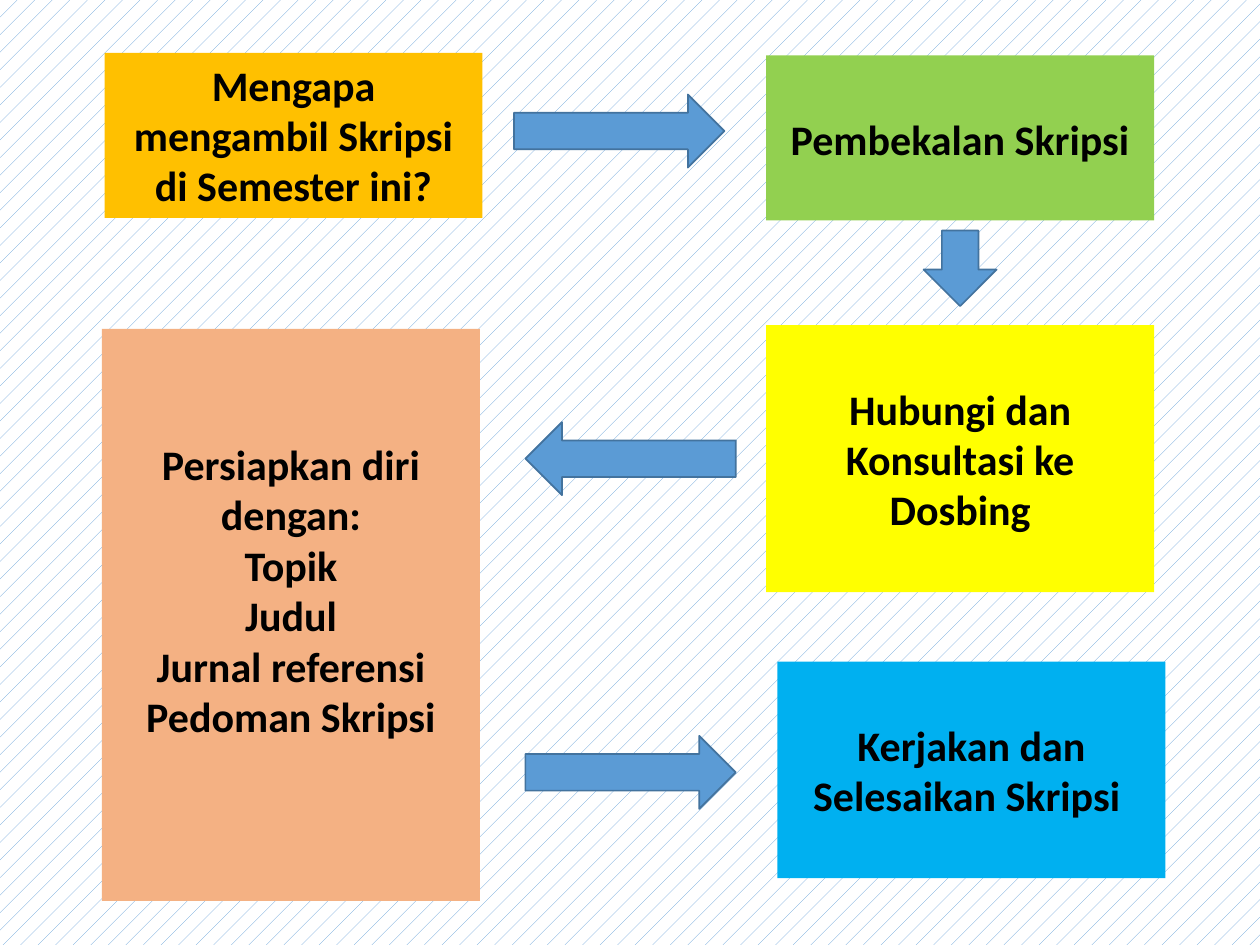
from pptx import Presentation
from pptx.dml.color import RGBColor
from pptx.enum.dml import MSO_PATTERN
from pptx.enum.shapes import MSO_SHAPE as Shape
from pptx.enum.text import MSO_ANCHOR as Anchor, PP_ALIGN as Align
from pptx.util import Inches, Pt

BLACK = RGBColor(0x00, 0x00, 0x00)
WHITE = RGBColor(0xFF, 0xFF, 0xFF)
BLUE = RGBColor(0x5B, 0x9B, 0xD5)
DARK_BLUE = RGBColor(0x43, 0x73, 0x9E)
ORANGE = RGBColor(0xFF, 0xC0, 0x00)
GREEN = RGBColor(0x92, 0xD0, 0x50)
YELLOW = RGBColor(0xFF, 0xFF, 0x00)
PEACH = RGBColor(0xF4, 0xB1, 0x83)
SKY = RGBColor(0x00, 0xB0, 0xF0)

FONT = "Calibri"
MARGIN = 0.05
LINE_HEIGHT = 0.41  # one line of 24 pt text, in inches

# Place (left, top, width, height), fill, lines of space above the text, text
STEPS = [
    ((0.83, 0.42, 3, 1.31), ORANGE, 0,
     ["Mengapa mengambil Skripsi di Semester ini?"]),
    ((6.08, 0.44, 3.08, 1.31), GREEN, 1, ["Pembekalan Skripsi"]),
    ((6.08, 2.58, 3.08, 2.12), YELLOW, 1,
     ["Hubungi dan Konsultasi ke Dosbing"]),
    ((0.81, 2.61, 3, 4.54), PEACH, 2,
     ["Persiapkan diri dengan:", "Topik", "Judul", "Jurnal referensi",
      "Pedoman Skripsi"]),
    ((6.17, 5.25, 3.08, 1.72), SKY, 1, ["Kerjakan dan Selesaikan Skripsi "]),
]

# Left, top, width, rotation
ARROWS = [
    (4.08, 0.75, 1.67, 0),
    (7.32, 1.84, 0.6, 90),
    (4.17, 3.35, 1.67, 180),
    (4.17, 5.84, 1.67, 0),
]
ARROW_HEIGHT = 0.58


def paint_background(slide):
    fill = slide.background.fill
    fill.patterned()
    fill.pattern = MSO_PATTERN.PERCENT_5
    fill.fore_color.rgb = BLUE
    fill.back_color.rgb = WHITE


def add_filled(slide, kind, place, color):
    shape = slide.shapes.add_shape(kind, *[Inches(v) for v in place])
    shape.shadow.inherit = False
    shape.fill.solid()
    shape.fill.fore_color.rgb = color
    return shape


def add_step(slide, place, color, lines_above, texts):
    box = add_filled(slide, Shape.RECTANGLE, place, color)
    box.line.fill.background()
    frame = box.text_frame
    frame.word_wrap = True
    frame.vertical_anchor = Anchor.TOP
    frame.margin_top = Inches(MARGIN + lines_above * LINE_HEIGHT)
    for index, text in enumerate(texts):
        para = frame.add_paragraph() if index else frame.paragraphs[0]
        para.alignment = Align.CENTER
        span = para.add_run()
        span.text = text
        span.font.name = FONT
        span.font.size = Pt(24)
        span.font.bold = True
        span.font.color.rgb = BLACK


def add_arrow(slide, left, top, width, rotation):
    place = (left, top, width, ARROW_HEIGHT)
    arrow = add_filled(slide, Shape.RIGHT_ARROW, place, BLUE)
    arrow.rotation = rotation
    arrow.line.color.rgb = DARK_BLUE
    arrow.line.width = Pt(1)


def main():
    deck = Presentation()
    deck.slide_width, deck.slide_height = Inches(10), Inches(7.5)
    page = deck.slides.add_slide(deck.slide_layouts[6])  # blank layout
    paint_background(page)

    # Steps of the thesis process
    for step in STEPS:
        add_step(page, *step)

    # Arrows from step to step
    for arrow in ARROWS:
        add_arrow(page, *arrow)

    deck.save("out.pptx")


if __name__ == "__main__":
    main()
